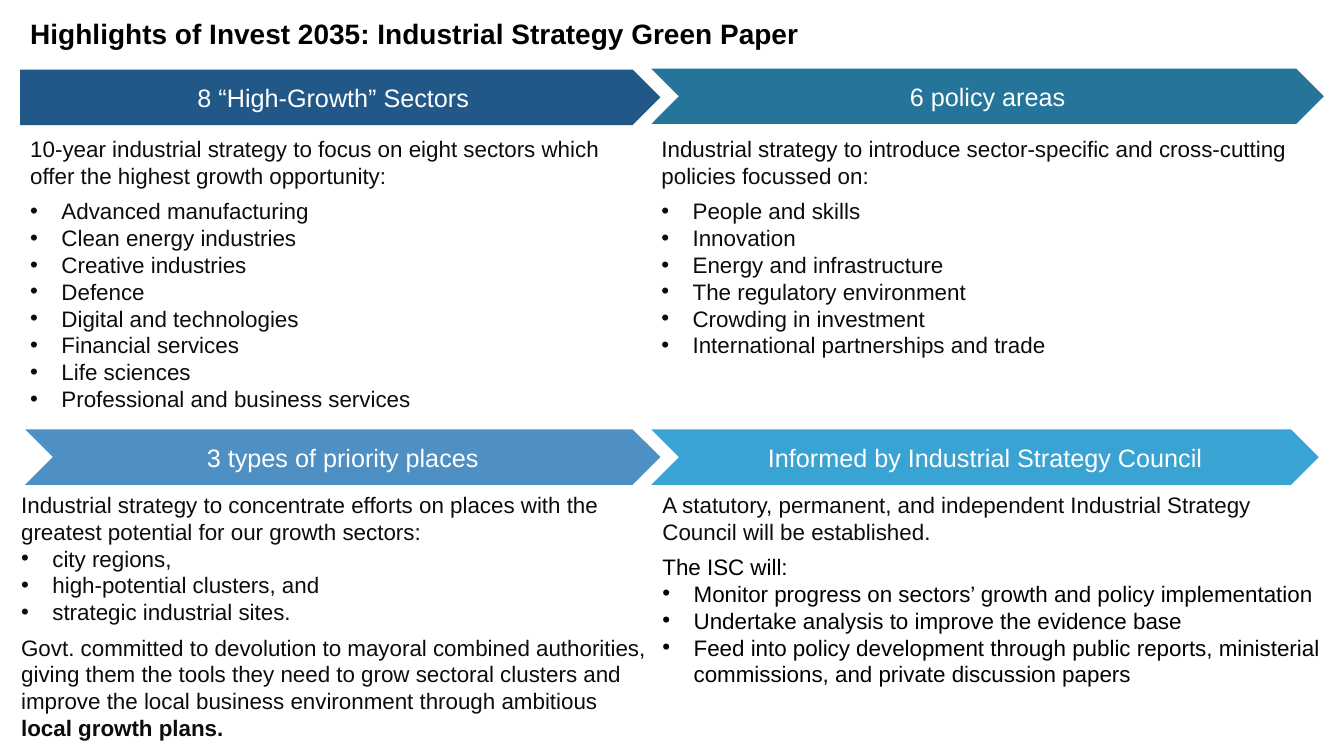
from dataclasses import dataclass

from lxml import etree
from pptx import Presentation
from pptx.dml.color import RGBColor
from pptx.enum import shapes, text
from pptx.oxml import ns
from pptx.util import Inches, Pt

HUES = {
    "black": "000000", "ink": "0B0C0C", "white": "FFFFFF", "navy": "225887",
    "teal": "25749A", "blue": "4E90C3", "sky": "39A3D3",
}
Box = tuple[float, float, float, float]
ARROW = shapes.MSO_SHAPE.CHEVRON
START = shapes.MSO_SHAPE.PENTAGON
FONT = "Arial"


@dataclass
class Line:
    words: str
    dot: bool = False
    gap: float = 0
    hue: str = "ink"
    strong: str = ""


@dataclass
class Panel:
    head: str
    form: shapes.MSO_SHAPE
    hue: str
    bar: Box
    box: Box
    lines: list[Line]


def dots(*items: str, gap: float = 0, hue: str = "ink") -> list[Line]:
    return [Line(item, True, 0 if i else gap, hue) for i, item in enumerate(items)]


PANELS = [
    Panel("8 “High-Growth” Sectors", START, "navy",
          (0.2, 0.69, 6.35, 0.55), (0.2, 1.29, 5.99, 3.21),
          [Line("10-year industrial strategy to focus on eight sectors which "
                "offer the highest growth opportunity:"),
           *dots("Advanced manufacturing", "Clean energy industries",
                 "Creative industries", "Defence", "Digital and technologies",
                 "Financial services", "Life sciences",
                 "Professional and business services", gap=6)]),
    Panel("6 policy areas", ARROW, "teal",
          (6.46, 0.68, 6.67, 0.55), (6.46, 1.29, 6.75, 2.41),
          [Line("Industrial strategy to introduce sector-specific and "
                "cross-cutting policies focussed on:"),
           *dots("People and skills", "Innovation", "Energy and infrastructure",
                 "The regulatory environment", "Crowding in investment",
                 "International partnerships and trade", gap=6)]),
    Panel("3 types of priority places", ARROW, "blue",
          (0.25, 4.26, 6.3, 0.55), (0.11, 4.82, 6.44, 2.68),
          [Line("Industrial strategy to concentrate efforts on places with the "
                "greatest potential for our growth sectors:"),
           *dots("city regions,", "high-potential clusters, and",
                 "strategic industrial sites."),
           Line("Govt. committed to devolution to mayoral combined authorities, "
                "giving them the tools they need to grow sectoral clusters and "
                "improve the local business environment through ambitious ",
                gap=6, strong="local growth plans.")]),
    Panel("Informed by Industrial Strategy Council", ARROW, "sky",
          (6.46, 4.26, 6.62, 0.55), (6.47, 4.82, 6.76, 2.61),
          [Line("A statutory, permanent, and independent Industrial Strategy "
                "Council will be established."),
           Line("The ISC will:", gap=6, hue="black"),
           *dots("Monitor progress on sectors’ growth and policy implementation",
                 "Undertake analysis to improve the evidence base",
                 "Feed into policy development through public reports, "
                 "ministerial commissions, and private discussion papers",
                 hue="black")]),
]


def tint(hue: str) -> RGBColor:
    return RGBColor.from_string(HUES[hue])


def style(para, size: float, hue: str, bold: bool = False) -> None:
    font = para.font
    font.name, font.size, font.bold = FONT, Pt(size), bold
    font.color.rgb = tint(hue)


def place(shape, box: Box) -> None:
    shape.left, shape.top, shape.width, shape.height = map(Inches, box)
    frame = shape.text_frame
    frame.word_wrap = True
    frame.auto_size = text.MSO_AUTO_SIZE.NONE
    frame.vertical_anchor = text.MSO_ANCHOR.TOP


def mark(para, dot: bool) -> None:
    props = para._p.get_or_add_pPr()
    indent = Inches(0.31) if dot else 0
    props.set("marL", str(indent))
    props.set("indent", str(-indent))
    if dot:
        face = etree.Element(ns.qn("a:buFont"), typeface=FONT)
        sign = etree.Element(ns.qn("a:buChar"), char="•")
        marks = [face, sign]
    else:
        marks = [etree.Element(ns.qn("a:buNone"))]
    spot = props.index(props.find(ns.qn("a:defRPr")))
    props[spot:spot] = marks


def write(frame, lines: list[Line]) -> None:
    for i, line in enumerate(lines):
        para = frame.add_paragraph() if i else frame.paragraphs[0]
        para.add_run().text = line.words
        para.alignment = text.PP_ALIGN.LEFT
        para.space_before = Pt(line.gap)
        style(para, 16, line.hue)
        mark(para, line.dot)
        if line.strong:
            run = para.add_run()
            run.text = line.strong
            run.font.bold = True


def banner(slide, panel: Panel) -> None:
    bar = slide.shapes.add_shape(panel.form, *map(Inches, panel.bar))
    bar.shadow.inherit = False
    bar.fill.solid()
    bar.fill.fore_color.rgb = tint(panel.hue)
    bar.line.fill.background()
    frame = bar.text_frame
    frame.vertical_anchor = text.MSO_ANCHOR.MIDDLE
    para = frame.paragraphs[0]
    para.text = panel.head
    para.alignment = text.PP_ALIGN.CENTER
    style(para, 18, "white")


def main() -> None:
    deck = Presentation()
    deck.slide_width, deck.slide_height = Inches(13.33), Inches(7.5)
    slide = deck.slides.add_slide(deck.slide_layouts.get_by_name("Comparison"))
    title = slide.shapes.title
    place(title, (0.2, 0.11, 8.73, 0.44))
    para = title.text_frame.paragraphs[0]
    para.text = "Highlights of Invest 2035: Industrial Strategy Green Paper"
    para.alignment = text.PP_ALIGN.LEFT
    style(para, 20, "black", True)
    for i, panel in enumerate(PANELS, 1):
        body = slide.placeholders[i]
        place(body, panel.box)
        write(body.text_frame, panel.lines)
        banner(slide, panel)
    deck.save("out.pptx")


if __name__ == "__main__":
    main()
